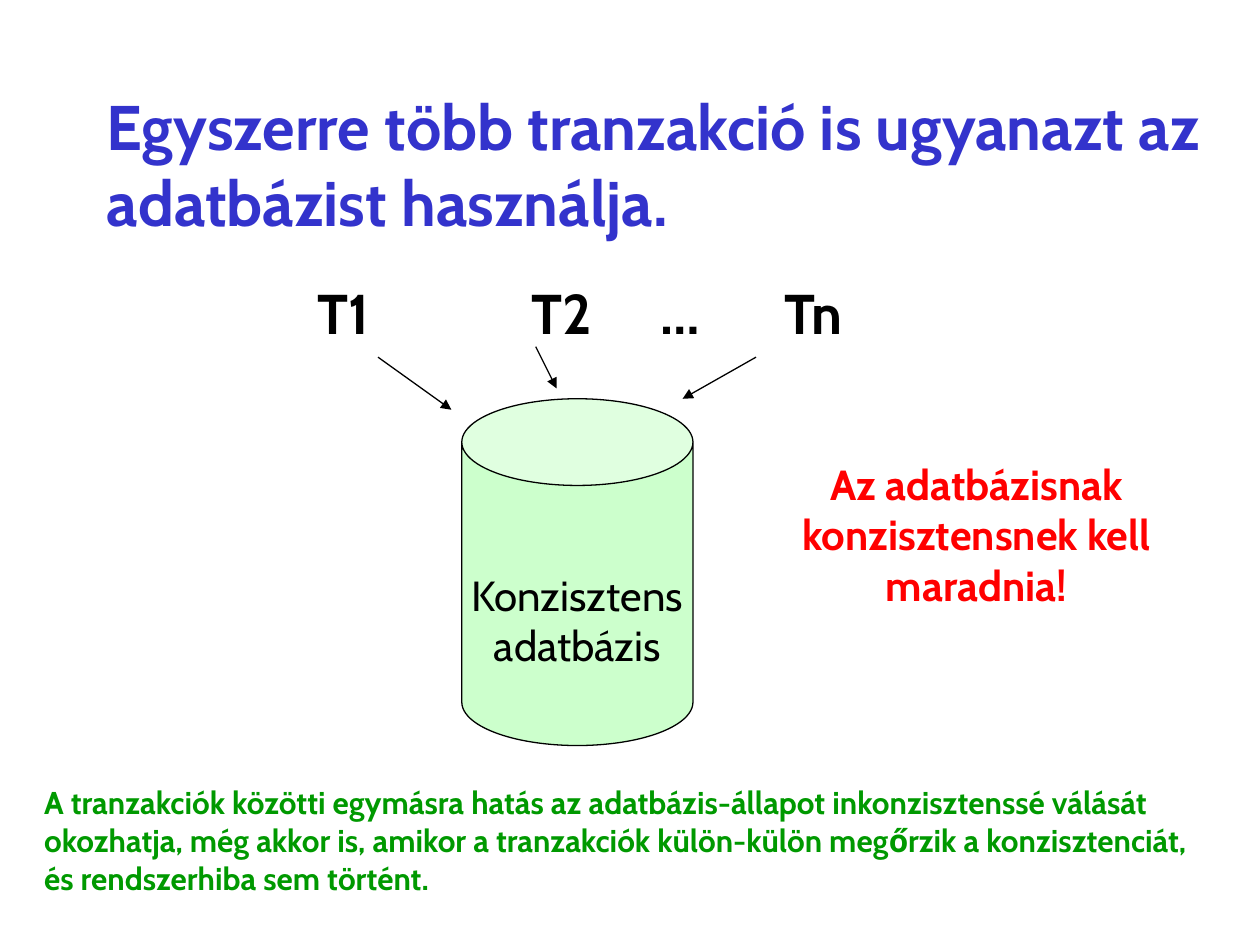
import pptx
import pptx.util
import pptx.dml.color
import pptx.enum.shapes
import pptx.enum.text
import pptx.oxml.ns
from lxml import etree

Cm = pptx.util.Cm
Pt = pptx.util.Pt
Align = pptx.enum.text.PP_ALIGN
Anchor = pptx.enum.text.MSO_ANCHOR
qn = pptx.oxml.ns.qn


def paint(color, code):
    """Set a colour format from a hex string."""
    color.rgb = pptx.dml.color.RGBColor.from_string(code)


def write(frame, text, size, code, bold=True, align=Align.LEFT):
    """Fill a text frame, one paragraph per line of text."""
    frame.text = text
    for para in frame.paragraphs:
        para.alignment = align
        font = para.font
        font.name, font.size, font.bold = "Cabin", Pt(size), bold
        paint(font.color, code)


def place(shape, box):
    """Move and size a shape by a box in centimetres."""
    shape.left, shape.top, shape.width, shape.height = map(Cm, box)


def title(slide, text, box):
    """Format the title placeholder."""
    shape = slide.shapes.title
    place(shape, box)
    frame = shape.text_frame
    frame.auto_size = pptx.enum.text.MSO_AUTO_SIZE.NONE
    frame.vertical_anchor = Anchor.MIDDLE
    write(frame, text, 36, "3333CC")


def label(slide, text, box, size, code, align=Align.LEFT):
    """Add a wrapped text box and return its frame."""
    frame = slide.shapes.add_textbox(*map(Cm, box)).text_frame
    frame.word_wrap = True
    write(frame, text, size, code, align=align)
    return frame


def tabs(para, stops):
    """Set left tab stops, in centimetres, on a paragraph."""
    props = para._p.get_or_add_pPr()
    group = etree.Element(qn("a:tabLst"))
    for stop in stops:
        etree.SubElement(group, qn("a:tab"), pos=str(Cm(stop)), algn="l")
    props.insert_element_before(group, "a:defRPr", "a:extLst")


def can(slide, text, box):
    """Add the database cylinder with its caption set low."""
    kind = pptx.enum.shapes.MSO_SHAPE.CAN
    shape = slide.shapes.add_shape(kind, *map(Cm, box))
    shape.adjustments[0] = 0.375
    shape.shadow.inherit = False
    shape.fill.solid()
    paint(shape.fill.fore_color, "CCFFCC")
    paint(shape.line.color, "000000")
    shape.line.width = Pt(0.75)
    frame = shape.text_frame
    frame.word_wrap = False
    frame.vertical_anchor = Anchor.MIDDLE
    frame.margin_top = Cm(1.16)
    write(frame, text, 24, "000000", False, Align.CENTER)


def arrow(slide, ends):
    """Add a thin arrow pointing at its second end."""
    kind = pptx.enum.shapes.MSO_CONNECTOR.STRAIGHT
    line = slide.shapes.add_connector(kind, *map(Cm, ends))
    paint(line.line.color, "000000")
    line.line.width = Pt(0.75)
    etree.SubElement(line.line._get_or_add_ln(), qn("a:tailEnd"), type="triangle")
    etree.SubElement(line._element.spPr, qn("a:effectLst"))


def main():
    """Build and save the slide."""
    deck = pptx.Presentation()
    deck.slide_width, deck.slide_height = Cm(25.4), Cm(19.05)
    slide = deck.slides.add_slide(deck.slide_layouts[5])

    title(slide, "Egyszerre több tranzakció is ugyanazt az adatbázist használja.",
          (1.9, 1.7, 22.9, 3.18))
    row = label(slide, "T1\tT2\t…\tTn", (6.15, 5.5, 17.3, 1.6), 32, "000000")
    tabs(row.paragraphs[0], (4.32, 6.91, 9.42))

    can(slide, "Konzisztens\nadatbázis", (9.31, 8.04, 4.66, 6.99))
    for ends in ((7.62, 7.2, 9.1, 8.26),
                 (10.8, 6.99, 11.22, 7.83),
                 (15.24, 7.2, 13.76, 8.04)):
        arrow(slide, ends)

    label(slide, "Az adatbázisnak konzisztensnek kell maradnia!",
          (15.62, 9.12, 8.13, 3.3), 24, "FF0000", Align.CENTER)
    label(slide, "A tranzakciók közötti egymásra hatás az adatbázis-állapot "
          "inkonzisztenssé válását okozhatja, még akkor is, amikor a tranzakciók "
          "külön-külön megőrzik a konzisztenciát, és rendszerhiba sem történt.",
          (0.64, 15.67, 24.18, 2.54), 18, "009900")
    deck.save("out.pptx")


if __name__ == "__main__":
    main()
